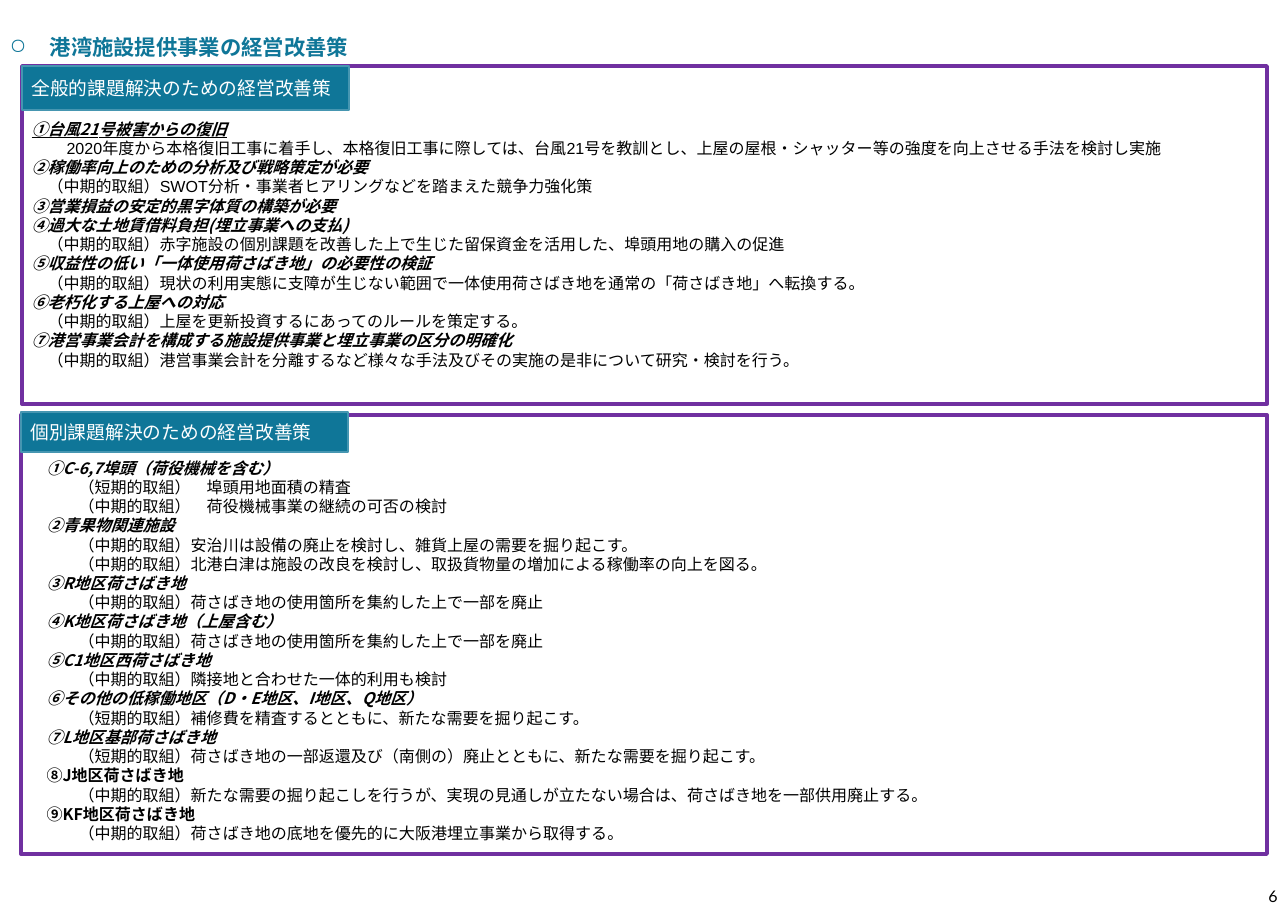
"""Builds the slide on management improvement measures for port facilities."""
from lxml.etree import SubElement
from pptx import Presentation
from pptx.dml.color import RGBColor
from pptx.enum.shapes import MSO_SHAPE
from pptx.enum.text import MSO_ANCHOR, MSO_AUTO_SIZE, PP_ALIGN
from pptx.oxml.ns import qn
from pptx.util import Emu, Pt

PX = 9525
CJK = "Noto Sans CJK JP"
TEAL, TEAL_EDGE, PURPLE, BLACK, WHITE = "0F7698", "4696B1", "7030A0", "000000", "FFFFFF"


def rgb(color):
    return RGBColor.from_string(color)


def write(paragraph, text, size, font, color, bold=False, italic=False):
    run = paragraph.add_run()
    run.text = text
    SubElement(run._r.get_or_add_rPr(), qn("a:ea")).set("typeface", CJK)
    style = paragraph.font
    style.size, style.name, style.bold, style.italic = Pt(size), font, bold, italic
    style.color.rgb = rgb(color)


general = [
    ("head", "①台風21号被害からの復旧"),
    ("lead", "2020年度から本格復旧工事に着手し、本格復旧工事に際しては、台風21号を教訓とし、上屋の屋根・シャッター等の強度を向上させる手法を検討し実施"),
    ("head", "②稼働率向上のための分析及び戦略策定が必要"),
    ("item", "（中期的取組）SWOT分析・事業者ヒアリングなどを踏まえた競争力強化策"),
    ("head", "③営業損益の安定的黒字体質の構築が必要"),
    ("head", "④過大な土地賃借料負担(埋立事業への支払)"),
    ("item", "（中期的取組）赤字施設の個別課題を改善した上で生じた留保資金を活用した、埠頭用地の購入の促進"),
    ("head", "⑤収益性の低い「一体使用荷さばき地」の必要性の検証"),
    ("item", "（中期的取組）現状の利用実態に支障が生じない範囲で一体使用荷さばき地を通常の「荷さばき地」へ転換する。"),
    ("head", "⑥老朽化する上屋への対応"),
    ("item", "（中期的取組）上屋を更新投資するにあってのルールを策定する。"),
    ("head", "⑦港営事業会計を構成する施設提供事業と埋立事業の区分の明確化"),
    ("item", "（中期的取組）港営事業会計を分離するなど様々な手法及びその実施の是非について研究・検討を行う。"),
]
individual = [
    ("head", "①C-6,7埠頭（荷役機械を含む）"),
    ("item", "（短期的取組）　埠頭用地面積の精査"),
    ("item", "（中期的取組）　荷役機械事業の継続の可否の検討"),
    ("head", "②青果物関連施設"),
    ("item", "（中期的取組）安治川は設備の廃止を検討し、雑貨上屋の需要を掘り起こす。"),
    ("item", "（中期的取組）北港白津は施設の改良を検討し、取扱貨物量の増加による稼働率の向上を図る。"),
    ("head", "③R地区荷さばき地"),
    ("item", "（中期的取組）荷さばき地の使用箇所を集約した上で一部を廃止"),
    ("head", "④K地区荷さばき地（上屋含む）"),
    ("item", "（中期的取組）荷さばき地の使用箇所を集約した上で一部を廃止"),
    ("head", "⑤C1地区西荷さばき地"),
    ("item", "（中期的取組）隣接地と合わせた一体的利用も検討"),
    ("head", "⑥その他の低稼働地区（D・E地区、I地区、Q地区）"),
    ("item", "（短期的取組）補修費を精査するとともに、新たな需要を掘り起こす。"),
    ("head", "⑦L地区基部荷さばき地"),
    ("item", "（短期的取組）荷さばき地の一部返還及び（南側の）廃止とともに、新たな需要を掘り起こす。"),
    ("upright", "⑧J地区荷さばき地"),
    ("item", "（中期的取組）新たな需要の掘り起こしを行うが、実現の見通しが立たない場合は、荷さばき地を一部供用廃止する。"),
    ("upright", "⑨KF地区荷さばき地"),
    ("item", "（中期的取組）荷さばき地の底地を優先的に大阪港埋立事業から取得する。"),
]
sections = [
    ("個別課題解決のための経営改善策", individual, (21, 414, 1243, 438), (21, 411, 326, 40),
     43, {"head": 16, "upright": 16, "item": 48}),
    ("全般的課題解決のための経営改善策", general, (22, 66, 1242, 337), (22, 66, 326, 44),
     53, {"head": 0, "lead": 35, "item": 16}),
]

deck = Presentation()
deck.slide_width, deck.slide_height = Emu(1285 * PX), Emu(907 * PX)
slide = deck.slides.add_slide(deck.slide_layouts[5])

title = slide.shapes.title
title.left, title.top, title.width, title.height = [Emu(n * PX) for n in (0, 29, 1285, 36)]
title.text_frame.auto_size = MSO_AUTO_SIZE.NONE
title.text_frame.vertical_anchor = MSO_ANCHOR.MIDDLE
heading = title.text_frame.paragraphs[0]
heading.alignment = PP_ALIGN.LEFT
heading_format = heading._p.get_or_add_pPr()
heading_format.set("marL", str(40 * PX))
heading_format.set("indent", str(-40 * PX))
SubElement(heading_format, qn("a:buChar")).set("char", "○")
write(heading, "港湾施設提供事業の経営改善策", 16, "Lato", TEAL, bold=True)

for label, lines, frame_box, label_box, top_inset, indents in sections:
    frame = slide.shapes.add_shape(MSO_SHAPE.RECTANGLE, *[Emu(n * PX) for n in frame_box])
    frame.shadow.inherit = False
    frame.fill.background()
    frame.line.color.rgb = rgb(PURPLE)
    frame.line.width = Pt(3)
    measures = frame.text_frame
    measures.word_wrap = True
    measures.vertical_anchor = MSO_ANCHOR.TOP
    measures.margin_top = Emu(top_inset * PX)
    for number, (kind, text) in enumerate(lines):
        measure = measures.add_paragraph() if number else measures.paragraphs[0]
        measure.alignment = PP_ALIGN.JUSTIFY
        measure.line_spacing = Pt(14.4)
        measure._p.get_or_add_pPr().set("marL", str(indents[kind] * PX))
        is_head = kind in ("head", "upright")
        write(measure, text, 12, CJK if is_head else "Arial", BLACK, is_head, kind == "head")
    if lines is general:
        measures.paragraphs[0].font.underline = True

    tab = slide.shapes.add_shape(MSO_SHAPE.RECTANGLE, *[Emu(n * PX) for n in label_box])
    tab.shadow.inherit = False
    tab.fill.solid()
    tab.fill.fore_color.rgb = rgb(TEAL)
    tab.line.color.rgb = rgb(TEAL_EDGE)
    tab.line.width = Pt(1.5)
    tab.text_frame.word_wrap = True
    tab.text_frame.vertical_anchor = MSO_ANCHOR.MIDDLE
    tab.text_frame.paragraphs[0].alignment = PP_ALIGN.LEFT
    write(tab.text_frame.paragraphs[0], label, 14, "Lato", WHITE)

page_number = slide.shapes.add_textbox(*[Emu(n * PX) for n in (1212, 881, 72, 26)]).text_frame
page_number.word_wrap = True
page_number.vertical_anchor = MSO_ANCHOR.MIDDLE
page_number.paragraphs[0].alignment = PP_ALIGN.RIGHT
write(page_number.paragraphs[0], "6", 12, "Lato", BLACK)

deck.save("out.pptx")
